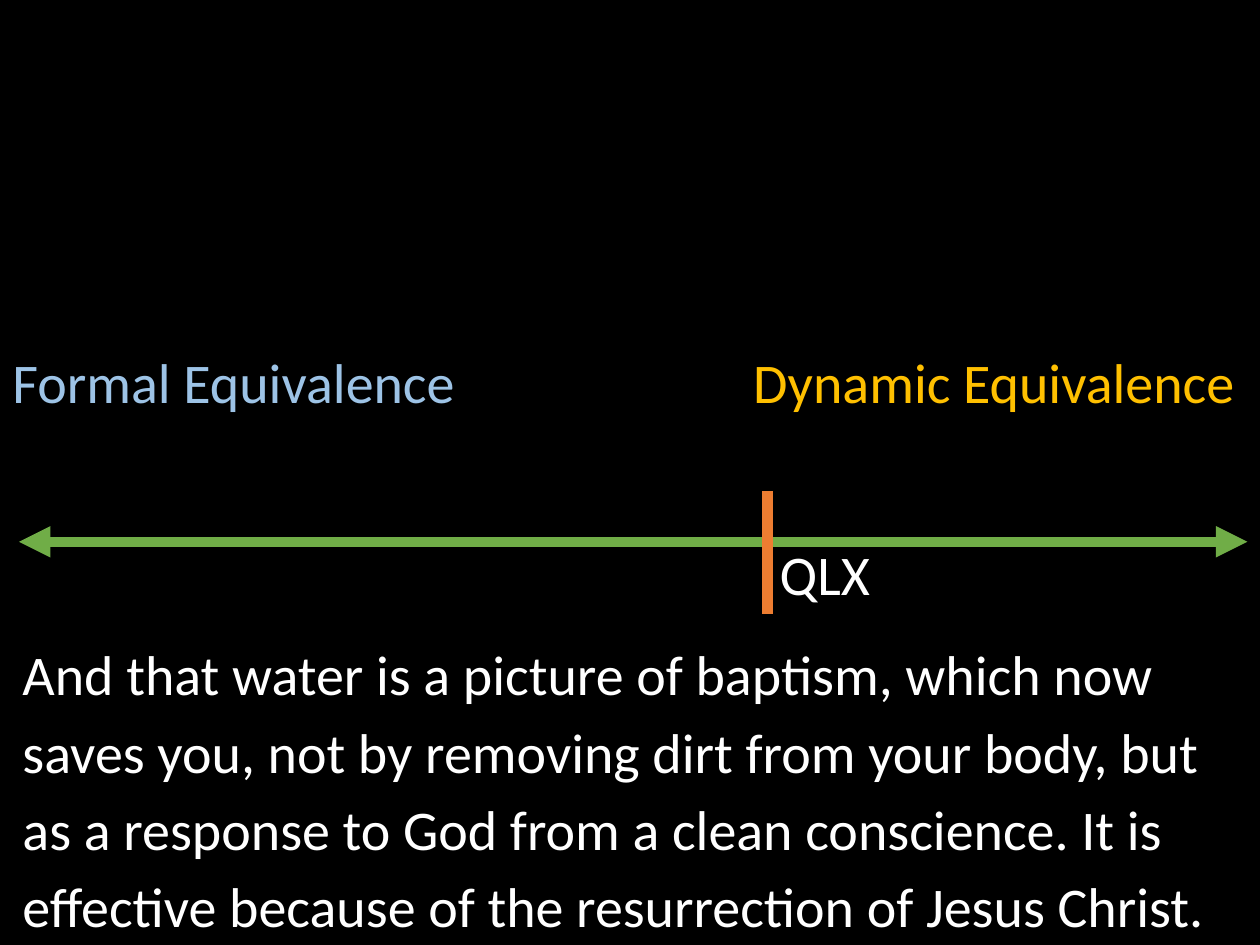
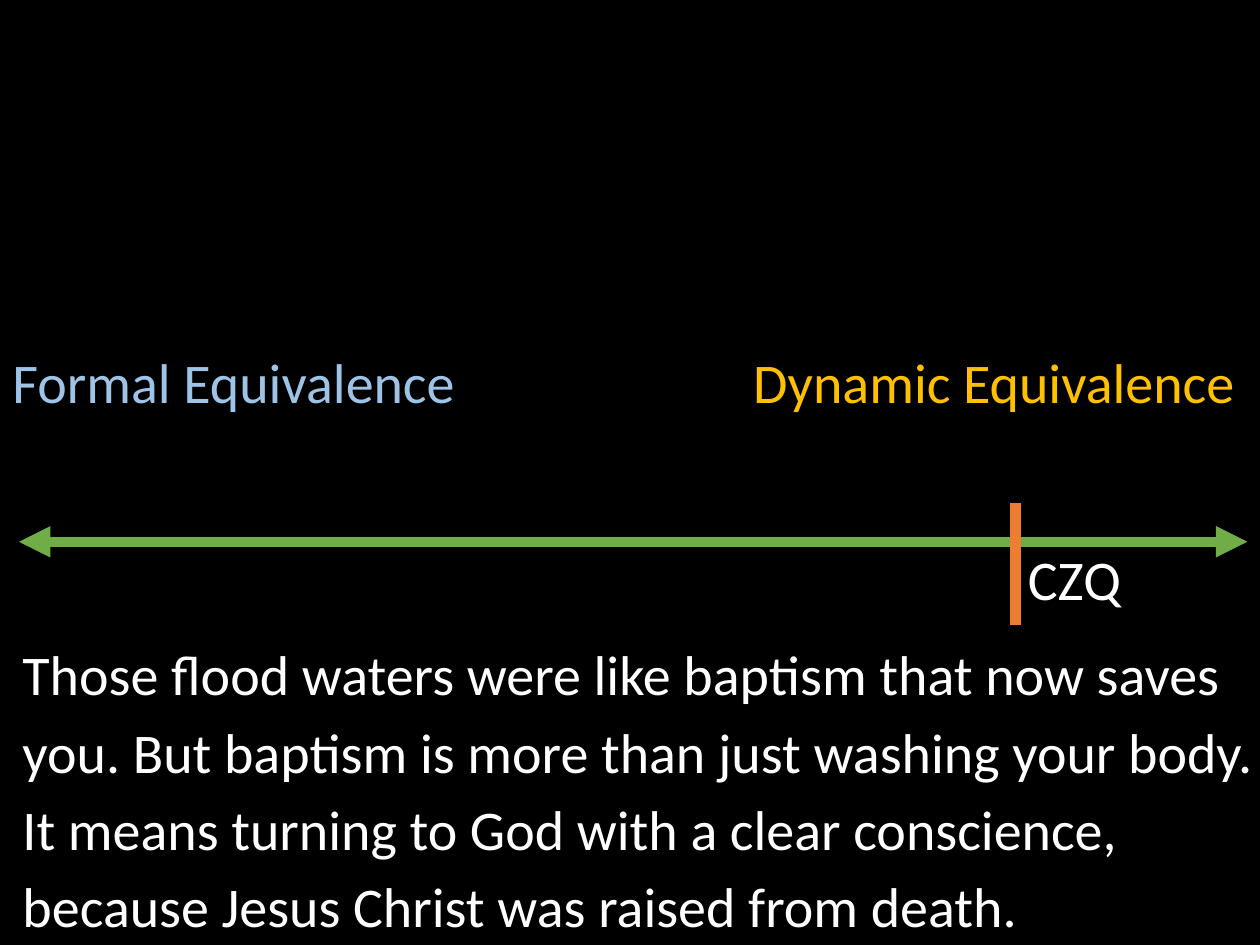
"""Build two slides that place Bible translations on a scale of equivalence."""
from dataclasses import dataclass

from lxml import etree
from pptx import Presentation, util as u
from pptx.dml.color import RGBColor
from pptx.enum import shapes, text
from pptx.oxml.ns import qn


@dataclass(frozen=True)
class Theme:
    """Colours and type of both slides."""
    background: str = "000000"
    formal: str = "9DC3E6"
    dynamic: str = "FFC000"
    scale: str = "70AD47"
    mark: str = "ED7D31"
    body: str = "FFFFFF"
    font: str = "Calibri"
    size: int = 32
    stroke: int = 6


THEME = Theme()
WIDTH, HEIGHT = 10, 7.5
POLES = [
    ("Formal Equivalence", 0, 4.43, THEME.formal),
    ("Dynamic Equivalence", 5.88, 4.03, THEME.dynamic),
]
TRANSLATIONS = [
    dict(
        name="QLX", position=6.09, mark_top=3.9, name_top=4.23, verse_width=9.85,
        verse="And that water is a picture of baptism, which now saves you, not by "
              "removing dirt from your body, but as a response to God from a clean "
              "conscience. It is effective because of the resurrection of Jesus Christ.",
    ),
    dict(
        name="CZQ", position=8.06, mark_top=3.99, name_top=4.27, verse_width=10.21,
        verse="Those flood waters were like baptism that now saves you. But baptism is "
              "more than just washing your body. It means turning to God with a clear "
              "conscience, because Jesus Christ was raised from death.",
    ),
]
POLE_TOP, LABEL_HEIGHT, NAME_WIDTH = 2.71, 0.64, 2.03
SCALE_LEFT, SCALE_RIGHT, SCALE_Y = 0.15, 9.9, 4.3
MARK_HEIGHT = 0.97
VERSE_LEFT, VERSE_TOP, VERSE_HEIGHT = 0.08, 4.95, 2.54


def add_words(slide, words, left, top, width, height, colour):
    """Add one wrapped paragraph and return it."""
    box = slide.shapes.add_textbox(*map(u.Inches, (left, top, width, height)))
    frame = box.text_frame
    frame.text = words
    frame.word_wrap = True
    frame.auto_size = text.MSO_AUTO_SIZE.SHAPE_TO_FIT_TEXT
    paragraph = frame.paragraphs[0]
    font = paragraph.runs[0].font
    font.name, font.size = THEME.font, u.Pt(THEME.size)
    font.color.rgb = RGBColor.from_string(colour)
    return paragraph


def add_line(slide, start, end, colour, arrows=False):
    """Add a thick straight line, with arrowheads at both ends if wanted."""
    line = slide.shapes.add_connector(
        shapes.MSO_CONNECTOR.STRAIGHT, *map(u.Inches, (*start, *end)))
    line.line.width = u.Pt(THEME.stroke)
    line.line.color.rgb = RGBColor.from_string(colour)
    if arrows:
        for tip in ("a:headEnd", "a:tailEnd"):
            etree.SubElement(line.get_or_add_ln(), qn(tip), type="triangle")
    etree.SubElement(line._element.spPr, qn("a:effectLst"))


def add_translation(deck, translation):
    """Add the slide of one translation: scale, mark, name and verse."""
    slide = deck.slides.add_slide(deck.slide_layouts.get_by_name("Blank"))
    for pole, left, width, colour in POLES:
        add_words(slide, pole, left, POLE_TOP, width, LABEL_HEIGHT, colour)
    add_line(slide, (SCALE_LEFT, SCALE_Y), (SCALE_RIGHT, SCALE_Y), THEME.scale, arrows=True)

    position, mark_top = translation["position"], translation["mark_top"]
    add_line(slide, (position, mark_top), (position, mark_top + MARK_HEIGHT), THEME.mark)
    verse = add_words(slide, translation["verse"], VERSE_LEFT, VERSE_TOP,
                      translation["verse_width"], VERSE_HEIGHT, THEME.body)
    verse.line_spacing, verse.space_after = 1.15, u.Pt(10)
    add_words(slide, translation["name"], position, translation["name_top"],
              NAME_WIDTH, LABEL_HEIGHT, THEME.body)


def main():
    """Build and save the deck."""
    deck = Presentation()
    deck.slide_width, deck.slide_height = u.Inches(WIDTH), u.Inches(HEIGHT)
    backdrop = deck.slide_master.background.fill
    backdrop.solid()
    backdrop.fore_color.rgb = RGBColor.from_string(THEME.background)
    for translation in TRANSLATIONS:
        add_translation(deck, translation)
    deck.save("out.pptx")


if __name__ == "__main__":
    main()
